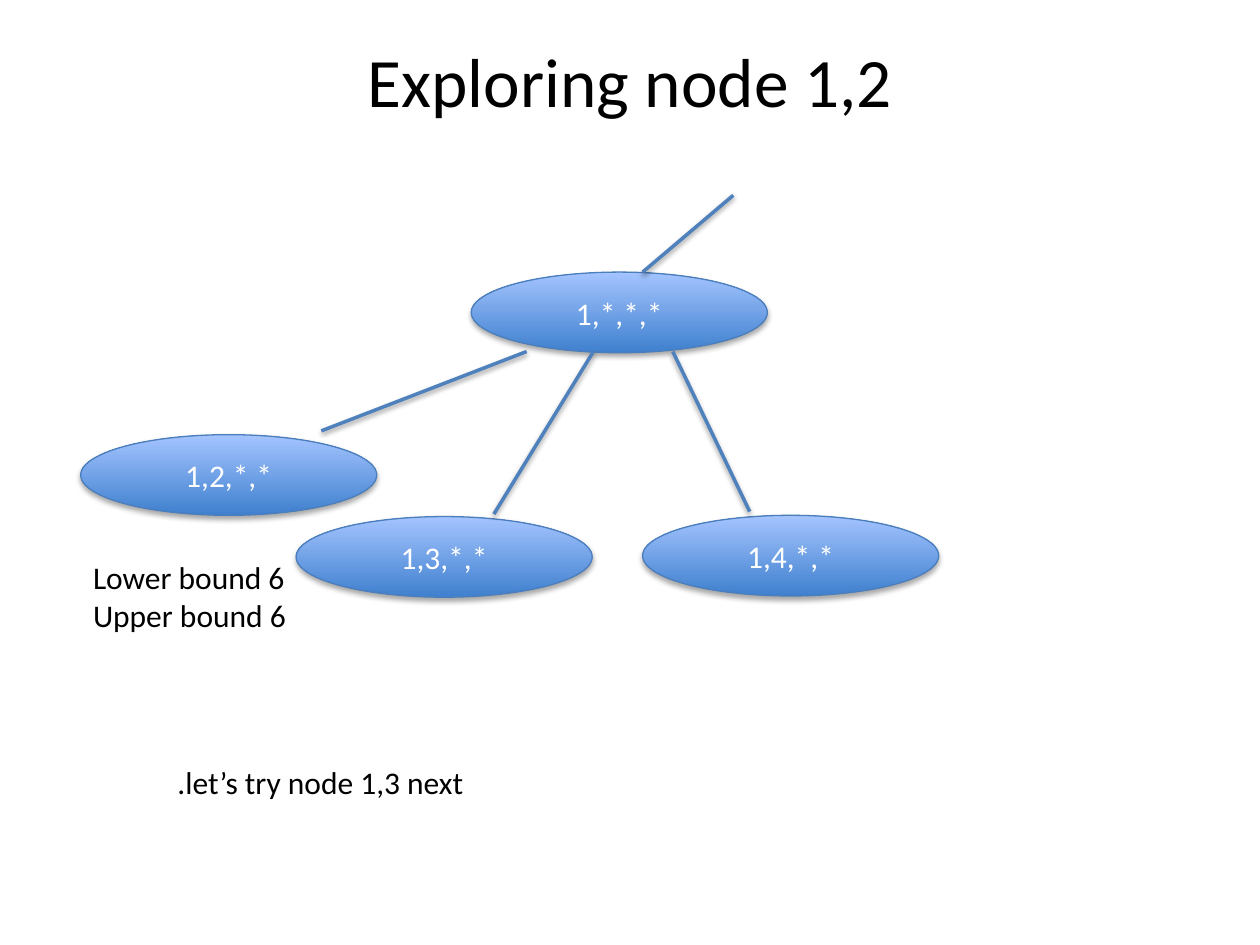
from lxml import etree
from pptx import Presentation
from pptx import util as u
from pptx.dml.color import RGBColor
from pptx.enum import shapes, text
from pptx.oxml.ns import qn

# Content: text with its place in inches
TITLE = ("Exploring node 1,2", (0.5, 0.3, 9, 1.25))
NODES = [
    ("1,*,*,*", 3.74, 2.16),
    ("1,4,*,*", 5.1, 4.09),
    ("1,3,*,*", 2.35, 4.1),
    ("1,2,*,*", 0.64, 3.45),
]
NODE_SIZE = (2.35, 0.64)
BRANCHES = [
    ((4.18, 2.79), (2.55, 3.42)),
    ((4.71, 2.79), (3.92, 4.08)),
    ((5.34, 2.79), (5.95, 4.06)),
    ((5.1, 2.16), (5.82, 1.55)),
]
NOTES = [
    ([".let’s try node 1,3 next"], (1.31, 6.01, 2.51, 0.71)),
    (["Lower bound 6", "Upper bound 6"], (0.64, 4.38, 1.74, 0.71)),
]

THEME = {
    "font": "Calibri", "title_size": 39.6, "body_size": 18,
    "ink": "000000", "node_text": "FFFFFF",
    "node_bottom": "3F80CE", "node_top": "A4C4FF",
    "node_line": "4B7EBC", "branch": "4F81BD",
    "node_shadow": (35, 1.8), "branch_shadow": (38, 1.6),  # opacity %, distance pt
    "shadow_blur": 3.1,
}


def color(name):
    return RGBColor.from_string(THEME[name])


def inches(values):
    return [u.Inches(value) for value in values]


def write(frame, lines, size, ink, align):
    frame.text = "\n".join(lines)
    for paragraph in frame.paragraphs:
        paragraph.alignment = align
        paragraph.font.name = THEME["font"]
        paragraph.font.size = u.Pt(THEME[size])
        paragraph.font.color.rgb = color(ink)


def add_shadow(shape, name):
    """Drop a soft black shadow straight down; call after fill and line."""
    opacity, distance = THEME[name]
    effects = etree.SubElement(shape._element.spPr, qn("a:effectLst"))
    shadow = etree.SubElement(
        effects, qn("a:outerShdw"), blurRad=str(u.Pt(THEME["shadow_blur"])),
        dist=str(u.Pt(distance)), dir="5400000", rotWithShape="0")
    black = etree.SubElement(shadow, qn("a:srgbClr"), val="000000")
    etree.SubElement(black, qn("a:alpha"), val=str(opacity * 1000))


def add_node(slide, label, left, top):
    shape = slide.shapes.add_shape(
        shapes.MSO_SHAPE.OVAL, *inches((left, top, *NODE_SIZE)))
    shape.fill.gradient()
    shape.fill.gradient_angle = 90
    for stop, name in zip(shape.fill.gradient_stops, ("node_bottom", "node_top")):
        stop.color.rgb = color(name)
    shape.line.color.rgb = color("node_line")
    shape.line.width = u.Pt(0.75)
    add_shadow(shape, "node_shadow")
    shape.text_frame.vertical_anchor = text.MSO_ANCHOR.MIDDLE
    write(shape.text_frame, [label], "body_size", "node_text", text.PP_ALIGN.CENTER)


def add_branch(slide, start, end):
    connector = slide.shapes.add_connector(
        shapes.MSO_CONNECTOR.STRAIGHT, *inches(start + end))
    connector.line.color.rgb = color("branch")
    connector.line.width = u.Pt(2)
    add_shadow(connector, "branch_shadow")


def main():
    presentation = Presentation()
    presentation.slide_width, presentation.slide_height = inches((10, 7.5))
    slide = presentation.slides.add_slide(presentation.slide_layouts[6])

    # Title
    title, place = TITLE
    frame = slide.shapes.add_textbox(*inches(place)).text_frame
    frame.word_wrap = True
    frame.margin_top = 0
    write(frame, [title], "title_size", "ink", text.PP_ALIGN.CENTER)

    # Search tree
    for node in NODES:
        add_node(slide, *node)
    for branch in BRANCHES:
        add_branch(slide, *branch)

    # Bounds and next step
    for lines, place in NOTES:
        frame = slide.shapes.add_textbox(*inches(place)).text_frame
        frame.word_wrap = False
        write(frame, lines, "body_size", "ink", text.PP_ALIGN.LEFT)

    presentation.save("out.pptx")


if __name__ == "__main__":
    main()
